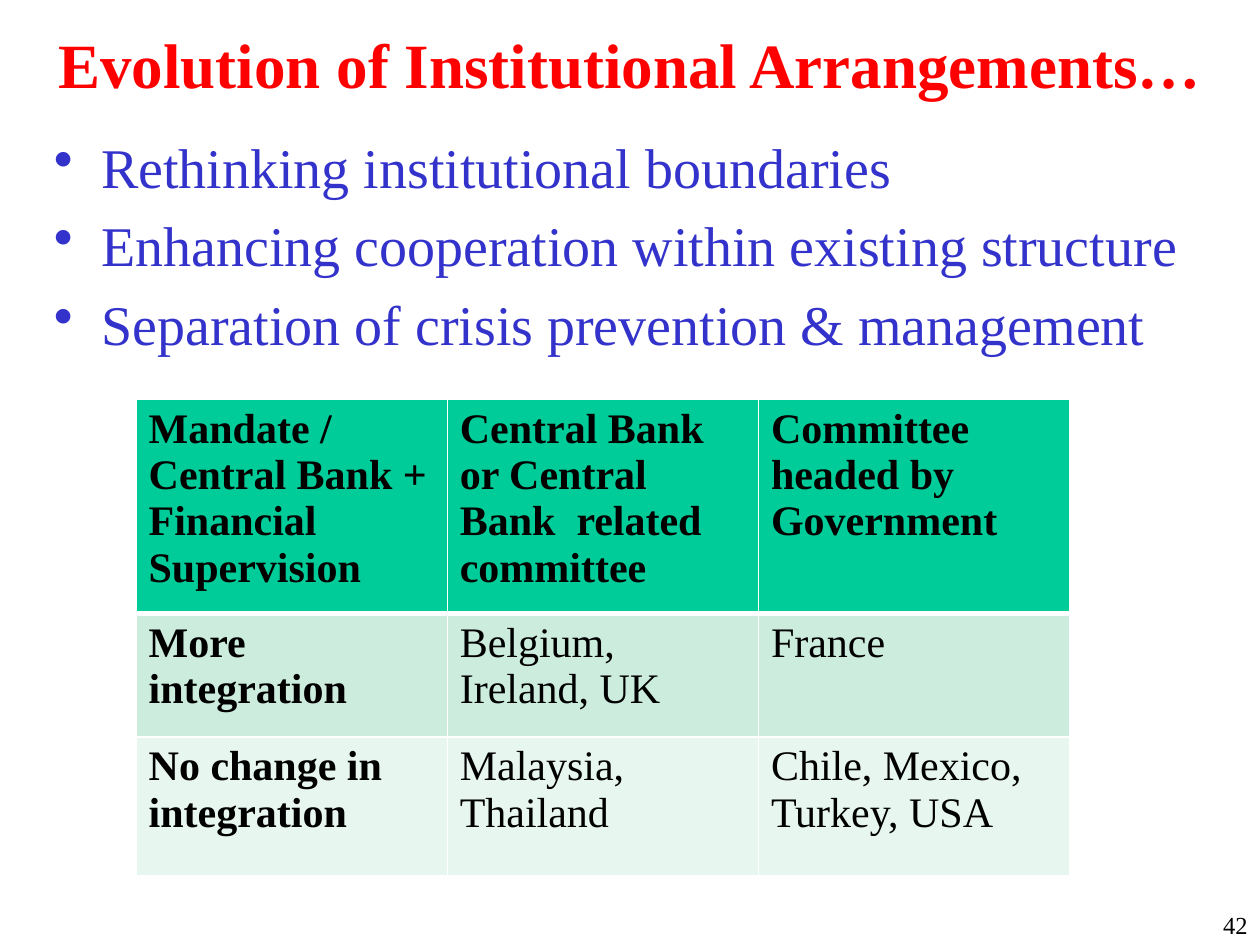
from lxml import etree
from pptx import Presentation, util as u
from pptx.dml.color import RGBColor
from pptx.enum import text
from pptx.oxml.ns import qn

RED = RGBColor(0xFF, 0x00, 0x00)
BLUE = RGBColor(0x33, 0x33, 0xCC)
BLACK = RGBColor(0x00, 0x00, 0x00)
WHITE = RGBColor(0xFF, 0xFF, 0xFF)
GREEN = RGBColor(0x00, 0xCC, 0x99)
MINT = RGBColor(0xCC, 0xEC, 0xDE)
PALE_MINT = RGBColor(0xE7, 0xF6, 0xEF)


class SlideBuilder:
    font = "Times New Roman"

    def __init__(self, slide):
        self.slide = slide

    def style(self, paragraph, size, color, bold=False):
        for run in paragraph.runs:
            run.font.name = self.font
            run.font.size = u.Pt(size)
            run.font.bold = bold
            run.font.color.rgb = color

    def textbox(self, box, words, size, color, bold=False,
                align=text.PP_ALIGN.LEFT, anchor=text.MSO_ANCHOR.TOP):
        frame = self.slide.shapes.add_textbox(*map(u.Inches, box)).text_frame
        frame.word_wrap = True
        frame.vertical_anchor = anchor
        frame.text = words
        for paragraph in frame.paragraphs:
            paragraph.alignment = align
            self.style(paragraph, size, color, bold)
        return frame

    def bullets(self, box, items, size, color):
        frame = self.textbox(box, "\n".join(items), size, color)
        indent = u.Inches(0.375)
        for paragraph in frame.paragraphs:
            props = paragraph._p.get_or_add_pPr()
            props.set("marL", str(indent))
            props.set("indent", str(-indent))
            before = etree.SubElement(props, qn("a:spcBef"))
            etree.SubElement(before, qn("a:spcPct"), val="20000")
            etree.SubElement(props, qn("a:buChar"), char="•")

    def borders(self, cell, widths):
        props = cell._tc.get_or_add_tcPr()
        for index, (side, width) in enumerate(widths.items()):
            line = etree.Element(qn(f"a:ln{side}"), w=str(u.Pt(width)))
            fill = etree.SubElement(line, qn("a:solidFill"))
            etree.SubElement(fill, qn("a:srgbClr"), val=str(WHITE))
            props.insert(index, line)

    def table(self, left, top, column_width, row_heights, rows, fills, size):
        columns = len(rows[0])
        table = self.slide.shapes.add_table(
            len(rows), columns, u.Inches(left), u.Inches(top),
            u.Inches(column_width * columns), u.Inches(sum(row_heights))).table
        for column in table.columns:
            column.width = u.Inches(column_width)
        for r, (height, fill) in enumerate(zip(row_heights, fills)):
            table.rows[r].height = u.Inches(height)
            for c, words in enumerate(rows[r]):
                cell = table.cell(r, c)
                cell.text = words
                cell.fill.solid()
                cell.fill.fore_color.rgb = fill
                self.style(cell.text_frame.paragraphs[0], size, BLACK,
                           bold=r == 0 or c == 0)
                # A thicker rule separates the header from the body
                self.borders(cell, {"L": 1, "R": 1, "T": 3 if r == 1 else 1,
                                    "B": 3 if r == 0 else 1})


def main():
    deck = Presentation()
    deck.slide_width, deck.slide_height = u.Inches(10), u.Inches(7.5)
    builder = SlideBuilder(deck.slides.add_slide(deck.slide_layouts[6]))

    # Title
    builder.textbox((0, 0, 10, 1), "Evolution of Institutional Arrangements…",
                    36, RED, bold=True, align=text.PP_ALIGN.CENTER,
                    anchor=text.MSO_ANCHOR.MIDDLE)

    # Key points
    builder.bullets((0.33, 1, 9.33, 6.08), [
        "Rethinking institutional boundaries",
        "Enhancing cooperation within existing structure",
        "Separation of crisis prevention & management",
    ], 32, BLUE)

    # Page number
    builder.textbox((9.42, 7.17, 0.58, 0.33), "42", 14, BLACK,
                    align=text.PP_ALIGN.RIGHT)

    # Countries by mandate and degree of integration
    builder.table(1.08, 3.17, 2.47, [1.58, 0.98, 1.1], [
        ["Mandate / Central Bank + Financial Supervision",
         "Central Bank or Central Bank  related committee",
         "Committee headed by Government"],
        ["More  integration", "Belgium, Ireland, UK", "France"],
        ["No change in integration", "Malaysia, Thailand",
         "Chile, Mexico, Turkey, USA"],
    ], [GREEN, MINT, PALE_MINT], 24)

    deck.save("out.pptx")


if __name__ == "__main__":
    main()
